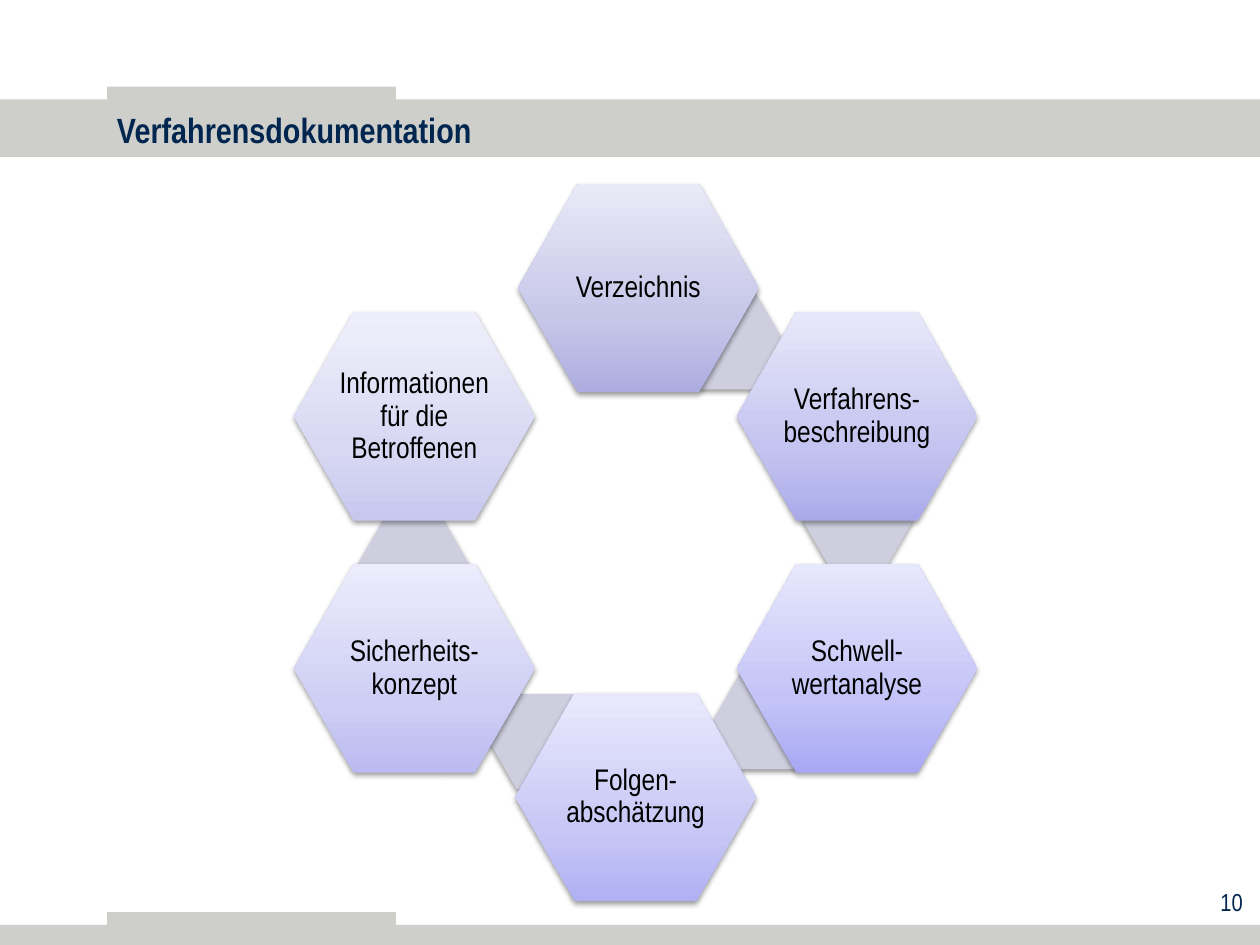
from copy import deepcopy
from dataclasses import dataclass

from lxml.etree import SubElement
from pptx import Presentation
from pptx.dml.color import RGBColor
from pptx.enum.shapes import MSO_SHAPE
from pptx.enum.text import MSO_ANCHOR, PP_ALIGN
from pptx.oxml.ns import qn
from pptx.util import Pt


@dataclass(frozen=True)
class Theme:
    font: str = "Arial Narrow"
    band: str = "CECFCB"
    navy: str = "00254F"
    label: str = "000000"
    link: str = "CECEDE"
    shadow: str = "000000"
    title_size: float = 20
    label_size: float = 17
    number_size: float = 14


THEME = Theme()

# Hexagon geometry
STEP_SIZE = (137.5, 119)
LINK_SIZE = (63.5, 54.5)
LEFT, TOP_CENTRE, BOTTOM_CENTRE, RIGHT = 168, 296, 294.5, 421
ROWS = (105, 178.5, 322.5, 396)

# Label, position, gradient from bottom to top, position of the link to the next step
STEPS = [
    ("Verzeichnis", (TOP_CENTRE, ROWS[0]), ("ADADE1", "C6C6E9", "E9E9F7"), (384.5, 168)),
    ("Verfahrens-beschreibung", (RIGHT, ROWS[1]), ("AAAAEB", "C4C4F0", "E8E8FA"), (458.5, 270)),
    ("Schwell-wertanalyse", (RIGHT, ROWS[2]), ("A8A8F5", "C3C3F7", "E7E7FD"), (407, 385)),
    ("Folgen-abschätzung", (BOTTOM_CENTRE, ROWS[3]), ("B0B0F4", "C8C8F6", "E9E9FD"), (279.5, 396.5)),
    ("Sicherheits-konzept", (LEFT, ROWS[2]), ("BBBBF1", "CFCFF5", "ECECFC"), (204.5, 295)),
    ("Informationen für die Betroffenen", (LEFT, ROWS[1]), ("C8C8EF", "D8D8F3", "EFEFFB"), None),
]


def set_values(target, values):
    for attribute, value in values.items():
        setattr(target, attribute, value)


def write_text(frame, text, size, color, frame_format, paragraph_format, bold=False):
    set_values(frame, {"word_wrap": True, **frame_format})
    paragraph = frame.paragraphs[0]
    set_values(paragraph, paragraph_format)
    run = paragraph.add_run()
    run.text = text
    set_values(run.font, {"name": THEME.font, "size": Pt(size), "bold": bold})
    run.font.color.rgb = RGBColor.from_string(color)


def add_plain_shape(slide, kind, position, size):
    shape = slide.shapes.add_shape(kind, *map(Pt, (*position, *size)))
    shape.shadow.inherit = False
    shape.line.fill.background()
    return shape


def fill_solid(shape, color):
    shape.fill.solid()
    shape.fill.fore_color.rgb = RGBColor.from_string(color)


def fill_gradient(shape, colors):
    shape.fill.gradient()
    shape.fill.gradient_angle = 90
    stop_list = shape._element.spPr.find(qn("a:gradFill")).find(qn("a:gsLst"))
    stop_list.append(deepcopy(stop_list[0]))
    for stop, position, color in zip(shape.fill.gradient_stops, (0, 0.35, 1), colors):
        stop.position = position
        stop.color.rgb = RGBColor.from_string(color)


def add_shadow(shape):
    effects = shape._element.spPr.find(qn("a:effectLst"))
    outer = SubElement(effects, qn("a:outerShdw"), blurRad=str(Pt(3.1)),
                       dist=str(Pt(1.6)), dir="5400000", rotWithShape="0")
    color = SubElement(outer, qn("a:srgbClr"), val=THEME.shadow)
    SubElement(color, qn("a:alpha"), val="38000")


def add_band(slide, position, size):
    band = add_plain_shape(slide, MSO_SHAPE.RECTANGLE, position, size)
    fill_solid(band, THEME.band)


def add_hexagon(slide, position, size, corner):
    hexagon = add_plain_shape(slide, MSO_SHAPE.HEXAGON, position, size)
    hexagon.adjustments[0] = corner
    add_shadow(hexagon)
    return hexagon


def add_link(slide, position):
    fill_solid(add_hexagon(slide, position, LINK_SIZE, 0.289), THEME.link)


def add_step(slide, label, position, colors):
    step = add_hexagon(slide, position, STEP_SIZE, 0.286)
    fill_gradient(step, colors)
    margins = {f"margin_{side}": Pt(1.5) for side in ("left", "top", "right", "bottom")}
    write_text(step.text_frame, label, THEME.label_size, THEME.label,
               {"vertical_anchor": MSO_ANCHOR.MIDDLE, **margins},
               {"alignment": PP_ALIGN.CENTER, "line_spacing": 0.9})


def add_text(slide, box, text, size, anchor, alignment, bold=False):
    frame = slide.shapes.add_textbox(*map(Pt, box)).text_frame
    write_text(frame, text, size, THEME.navy, {"vertical_anchor": anchor},
               {"alignment": alignment}, bold)


def main():
    presentation = Presentation()
    set_values(presentation, {"slide_width": Pt(720), "slide_height": Pt(540)})
    slide = presentation.slides.add_slide(presentation.slide_layouts[6])

    # Header and footer bands, each with a raised tab
    for top, height in ((56.75, 33), (528.5, 12)):
        add_band(slide, (0, top), (720, height))
        add_band(slide, (61.25, top - 7.25), (165, 9.5))

    # Title
    add_text(slide, (59.75, 59, 626.5, 30.25), "Verfahrensdokumentation",
             THEME.title_size, MSO_ANCHOR.MIDDLE, PP_ALIGN.LEFT, bold=True)

    # Ring of steps, each link lying behind the step it leaves
    for label, position, colors, link_position in STEPS:
        if link_position:
            add_link(slide, link_position)
        add_step(slide, label, position, colors)

    # Slide number
    add_text(slide, (557.25, 503.25, 160, 31), "10",
             THEME.number_size, MSO_ANCHOR.TOP, PP_ALIGN.RIGHT)

    presentation.save("out.pptx")


if __name__ == "__main__":
    main()
